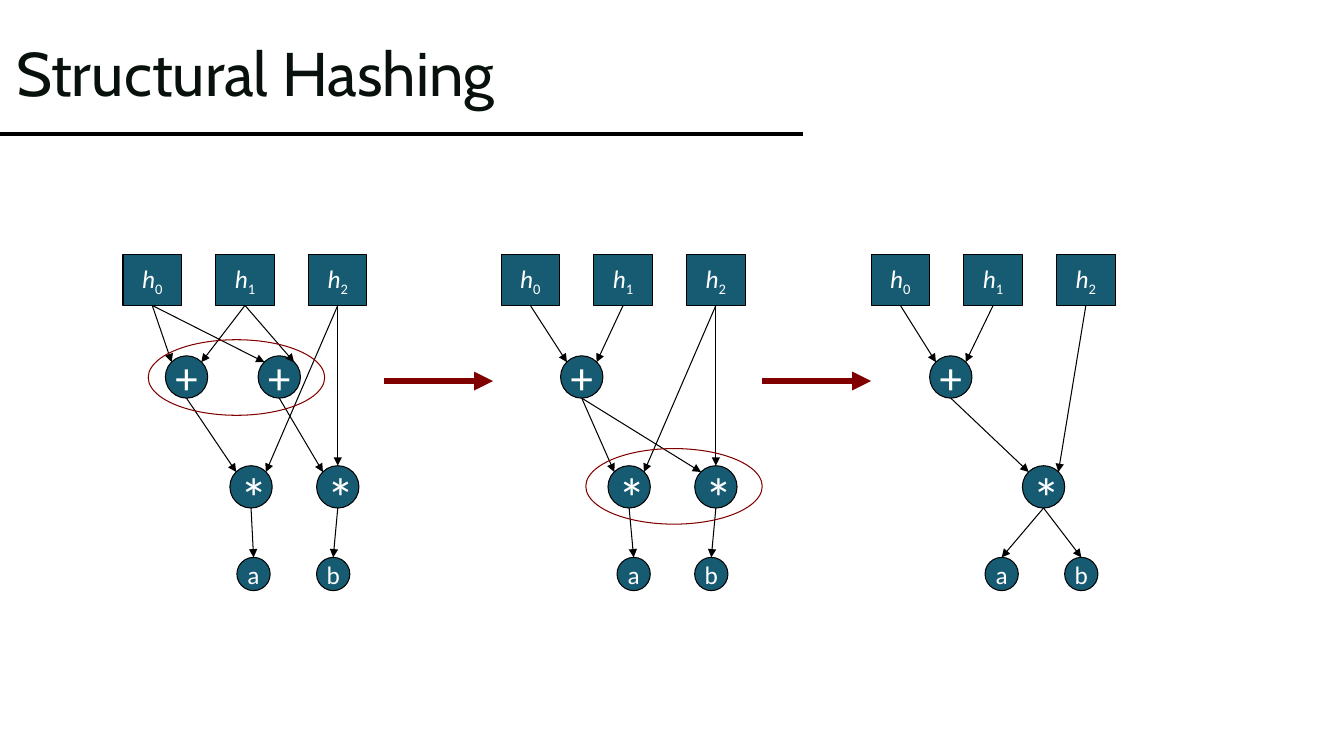
"""Build a slide showing structural hashing as three successive dataflow graphs."""
from dataclasses import dataclass

from lxml import etree
from pptx import Presentation
from pptx.dml.color import RGBColor
from pptx.enum.shapes import MSO_CONNECTOR, MSO_SHAPE
from pptx.enum.text import MSO_ANCHOR, MSO_AUTO_SIZE, PP_ALIGN
from pptx.oxml.ns import qn
from pptx.shapes.autoshape import Shape
from pptx.shapes.shapetree import GroupShapes, SlideShapes
from pptx.text.text import _Paragraph
from pptx.util import Inches, Pt

RECT, OVAL = MSO_SHAPE.RECTANGLE, MSO_SHAPE.OVAL
STRAIGHT = MSO_CONNECTOR.STRAIGHT
MIDDLE = MSO_ANCHOR.MIDDLE
FIT_SHAPE, NO_FIT = MSO_AUTO_SIZE.SHAPE_TO_FIT_TEXT, MSO_AUTO_SIZE.NONE
LEFT, CENTER = PP_ALIGN.LEFT, PP_ALIGN.CENTER

COLORS = {"node": "175B73", "ink": "000000", "accent": "800000",
          "label": "FFFFFF", "title": "08110B"}
INPUT_PITCH = 0.92
RING_WIDTH, RING_HEIGHT = 1.75, 0.75
STEP_ARROW_Y = 3.78

Point = tuple[float, float]


@dataclass(frozen=True)
class NodeStyle:
    """Geometry and label size shared by one row of nodes."""
    geometry: MSO_SHAPE
    top: float
    width: float
    height: float
    size: int


INPUT = NodeStyle(RECT, 2.53, 0.58, 0.5, 18)
PLUS = NodeStyle(OVAL, 3.53, 0.42, 0.42, 32)
TIMES = NodeStyle(OVAL, 4.62, 0.42, 0.42, 40)
LEAF = NodeStyle(OVAL, 5.53, 0.33, 0.33, 18)


@dataclass(frozen=True)
class Node:
    """One node of a graph."""
    style: NodeStyle
    label: str
    left: float

    def at(self, across: float, down: float) -> Point:
        """Return the point at the given fractions of the node's box."""
        return (self.left + across * self.style.width,
                self.style.top + down * self.style.height)


@dataclass(frozen=True)
class Graph:
    """One stage of hashing: operators, edges and the pair about to merge."""
    left: float
    operators: dict[str, Node]
    edges: str
    ring: Point | None = None


ENTRY = {"left": (0.15, 0.15), "top": (0.5, 0), "right": (0.85, 0.15)}

GRAPHS = [
    Graph(1.22,
          {"p": Node(PLUS, "+", 1.64), "q": Node(PLUS, "+", 2.56),
           "s": Node(TIMES, "*", 2.28), "t": Node(TIMES, "*", 3.14),
           "a": Node(LEAF, "a", 2.35), "b": Node(LEAF, "b", 3.14)},
          "h0-p-left h1-p-right h0-q-left h1-q-right p-s-left h2-s-right "
          "q-t-left h2-t-top s-a-top t-b-top",
          (1.47, 3.37)),
    Graph(4.97,
          {"p": Node(PLUS, "+", 5.56),
           "s": Node(TIMES, "*", 6.03), "t": Node(TIMES, "*", 6.89),
           "a": Node(LEAF, "a", 6.12), "b": Node(LEAF, "b", 6.89)},
          "h0-p-left h1-p-right p-s-left h2-s-right p-t-left h2-t-top "
          "s-a-top t-b-top",
          (5.81, 4.45)),
    Graph(8.64,
          {"p": Node(PLUS, "+", 9.22), "s": Node(TIMES, "*", 10.14),
           "a": Node(LEAF, "a", 9.77), "b": Node(LEAF, "b", 10.56)},
          "h0-p-left h1-p-right p-s-left h2-s-right s-a-top s-b-top"),
]


def rgb(name: str) -> RGBColor:
    """Look up a named colour."""
    return RGBColor.from_string(COLORS[name])


def style_text(paragraph: _Paragraph, font: str, size: int, color: str) -> None:
    """Set the font of a whole paragraph."""
    paragraph.font.name = font
    paragraph.font.size = Pt(size)
    paragraph.font.color.rgb = rgb(color)


def add_line(shapes: SlideShapes | GroupShapes, start: Point, end: Point,
             color: str, width: float, arrow: bool = True) -> None:
    """Draw a straight line, with an arrowhead at its end if wanted."""
    line = shapes.add_connector(STRAIGHT, *map(Inches, start + end))
    line.line.color.rgb = rgb(color)
    line.line.width = Pt(width)
    if arrow:
        etree.SubElement(line.line._get_or_add_ln(), qn("a:tailEnd"), type="triangle")
    etree.SubElement(line._element.spPr, qn("a:effectLst"))


def add_outlined(shapes: GroupShapes, geometry: MSO_SHAPE, box: tuple[float, ...],
                 color: str) -> Shape:
    """Draw a thinly outlined shape without a shadow."""
    shape = shapes.add_shape(geometry, *map(Inches, box))
    shape.shadow.inherit = False
    shape.line.color.rgb = rgb(color)
    shape.line.width = Pt(0.75)
    return shape


def add_node(shapes: GroupShapes, node: Node) -> None:
    """Draw a node and its label; a digit in the label becomes a subscript."""
    style = node.style
    body = add_outlined(shapes, style.geometry,
                        (node.left, style.top, style.width, style.height), "ink")
    body.fill.solid()
    body.fill.fore_color.rgb = rgb("node")
    if style is TIMES:
        frame = shapes.add_textbox(Inches(node.left), Inches(4.54),
                                   Inches(0.48), Inches(0.77)).text_frame
        frame.auto_size = FIT_SHAPE
    else:
        frame = body.text_frame
        frame.vertical_anchor = MIDDLE
    frame.word_wrap = False
    label = frame.paragraphs[0]
    label.alignment = LEFT if style is TIMES else CENTER
    style_text(label, "Calibri", style.size, "label")
    for character in node.label:
        run = label.add_run()
        run.text = character
        if character.isdigit():
            run._r.get_or_add_rPr().set("baseline", "-25000")
        elif style is INPUT:
            run.font.italic = True


def add_graph(shapes: SlideShapes, graph: Graph) -> None:
    """Draw one graph as a group."""
    group = shapes.add_group_shape().shapes
    inputs = {f"h{i}": Node(INPUT, f"h{i}", graph.left + i * INPUT_PITCH)
              for i in range(3)}
    nodes = inputs | graph.operators
    for node in nodes.values():
        add_node(group, node)
    for edge in graph.edges.split():
        source, target, side = edge.split("-")
        add_line(group, nodes[source].at(0.5, 1), nodes[target].at(*ENTRY[side]),
                 "ink", 0.75)
    if graph.ring:
        ring = add_outlined(group, OVAL, (*graph.ring, RING_WIDTH, RING_HEIGHT), "accent")
        ring.fill.background()


def add_title(shapes: SlideShapes) -> None:
    """Place the title and the rule below it."""
    title = shapes.title
    title.left, title.top, title.width, title.height = map(Inches, (0.06, 0.03, 7.51, 1.45))
    title.text_frame.text = "Structural Hashing"
    title.text_frame.vertical_anchor = MIDDLE
    title.text_frame.auto_size = NO_FIT
    heading = title.text_frame.paragraphs[0]
    heading.alignment = LEFT
    heading.line_spacing = 0.9
    style_text(heading, "Cabin", 44, "title")
    add_line(shapes, (0, 1.33), (7.96, 1.33), "ink", 2.25, arrow=False)


def main() -> None:
    """Build and save the slide."""
    deck = Presentation()
    deck.slide_width, deck.slide_height = Inches(13.33), Inches(7.5)
    shapes = deck.slides.add_slide(deck.slide_layouts[5]).shapes
    add_title(shapes)
    for graph in GRAPHS:
        add_graph(shapes, graph)
    for start in (3.81, 7.56):
        add_line(shapes, (start, STEP_ARROW_Y), (start + 1.08, STEP_ARROW_Y), "accent", 4.5)
    deck.save("out.pptx")


if __name__ == "__main__":
    main()
